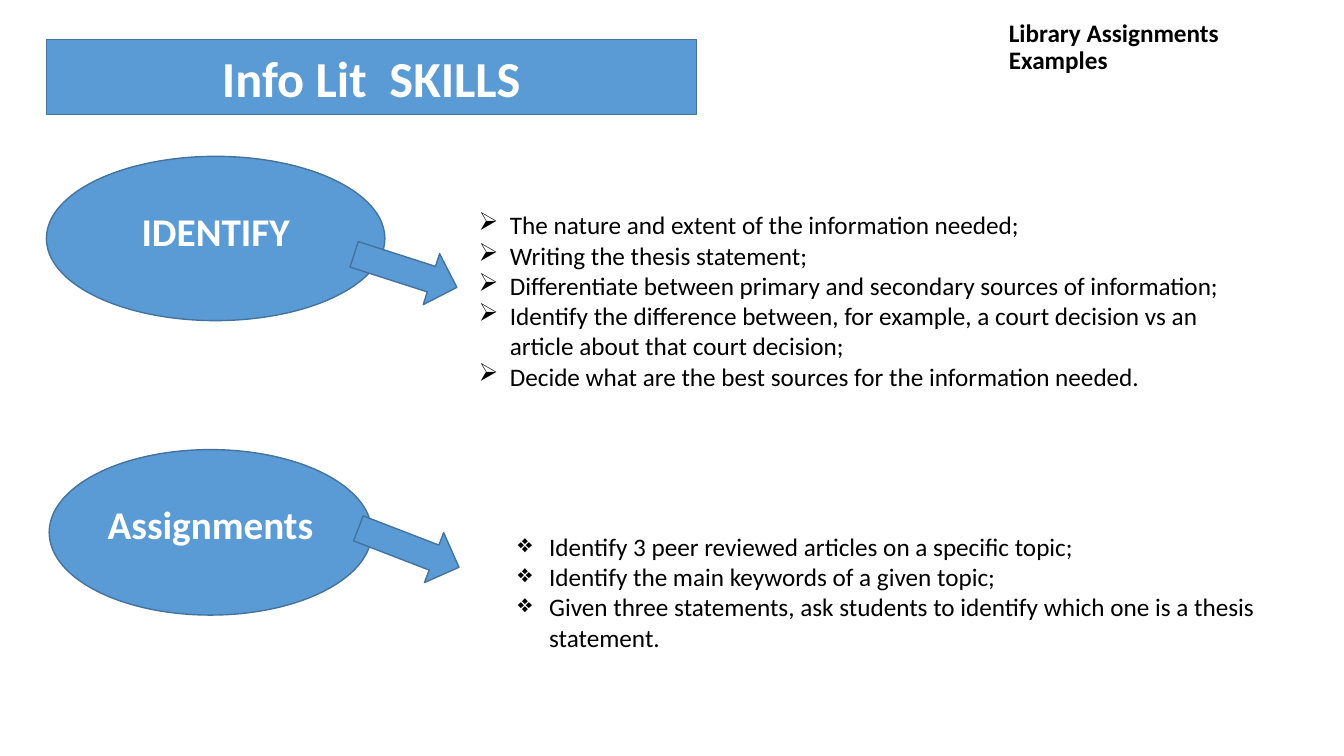
import pptx
import pptx.util
import pptx.dml.color
import pptx.enum.shapes
import pptx.enum.text
import pptx.oxml.ns
import lxml.etree

Cm, Pt = pptx.util.Cm, pptx.util.Pt
Kind = pptx.enum.shapes.MSO_SHAPE
Align = pptx.enum.text.PP_ALIGN
Anchor = pptx.enum.text.MSO_ANCHOR
Fit = pptx.enum.text.MSO_AUTO_SIZE

# Content, with boxes in cm: left, top, width, height
TITLE = ("Library Assignments Examples", (25.17, 0.48, 8.1, 1.45))
BANNER = ("Info Lit  SKILLS", (1.17, 0.99, 16.38, 1.9))
ROWS = [
    {
        "name": "IDENTIFY", "oval": (1.17, 3.94, 8.53, 4.14),
        "arrow": (8.86, 6.15, 2.72, 1.35), "turn": 17.8,
        "list": (11.81, 5.16, 19.28, 4.88), "mark": "➢",
        "items": [
            "The nature and extent of the information needed;",
            "Writing the thesis statement;",
            "Differentiate between primary and secondary sources of information;",
            "Identify the difference between, for example, a court decision vs an "
            "article about that court decision;",
            "Decide what are the best sources for the information needed.",
        ],
    },
    {
        "name": "Assignments", "oval": (1.24, 11.33, 8.13, 4.17),
        "arrow": (8.94, 13.13, 2.72, 1.35), "turn": 21.1,
        "list": (12.8, 13.26, 20.17, 3.33), "mark": "❖",
        "items": [
            "Identify 3 peer reviewed articles on a specific topic;",
            "Identify the main keywords of a given topic;",
            "Given three statements, ask students to identify which one is a "
            "thesis statement.",
        ],
    },
]
COLORS = {"fill": "5B9BD5", "edge": "43739E", "white": "FFFFFF", "black": "000000"}
INDENT = Cm(0.79)


def color(name):
    return pptx.dml.color.RGBColor.from_string(COLORS[name])


def write(frame, lines, size=18, ink="black", bold=False, align=Align.LEFT,
          anchor=Anchor.MIDDLE, space=None, mark=None):
    frame.word_wrap = True
    frame.vertical_anchor = anchor
    for i, line in enumerate(lines):
        para = frame.paragraphs[0] if i == 0 else frame.add_paragraph()
        para.alignment = align
        if space:
            para.line_spacing = space
        run = para.add_run()
        run.text = line
        font = run.font
        font.name, font.size, font.bold = "Calibri", Pt(size), bold
        font.color.rgb = color(ink)
        if mark:
            props = para._p.get_or_add_pPr()
            props.set("marL", str(INDENT))
            props.set("indent", str(-INDENT))
            tag = pptx.oxml.ns.qn("a:buChar")
            lxml.etree.SubElement(props, tag).set("char", mark)


def draw(kind, box):
    shape = slide.shapes.add_shape(kind, *map(Cm, box))
    shape.shadow.inherit = False
    shape.fill.solid()
    shape.fill.fore_color.rgb = color("fill")
    shape.line.color.rgb = color("edge")
    shape.line.width = Pt(1)
    return shape


deck = pptx.Presentation()
deck.slide_width, deck.slide_height = Cm(33.87), Cm(19.05)
slide = deck.slides.add_slide(deck.slide_layouts[5])

# Title
text, box = TITLE
title = slide.shapes.title
title.left, title.top, title.width, title.height = map(Cm, box)
write(title.text_frame, [text], bold=True, space=0.9)
title.text_frame.auto_size = Fit.NONE

# Banner
text, box = BANNER
write(draw(Kind.RECTANGLE, box).text_frame, [text], size=36, ink="white",
      bold=True, align=Align.CENTER)

# Each row: oval, bullet list, arrow
for row in ROWS:
    oval = draw(Kind.OVAL, row["oval"])
    write(oval.text_frame, [row["name"]], size=28, ink="white", bold=True,
          align=Align.CENTER, space=Pt(22))
    notes = slide.shapes.add_textbox(*map(Cm, row["list"]))
    write(notes.text_frame, row["items"], anchor=Anchor.TOP, mark=row["mark"])
    notes.text_frame.auto_size = Fit.SHAPE_TO_FIT_TEXT
    arrow = draw(Kind.RIGHT_ARROW, row["arrow"])
    arrow.rotation = row["turn"]

deck.save("out.pptx")
